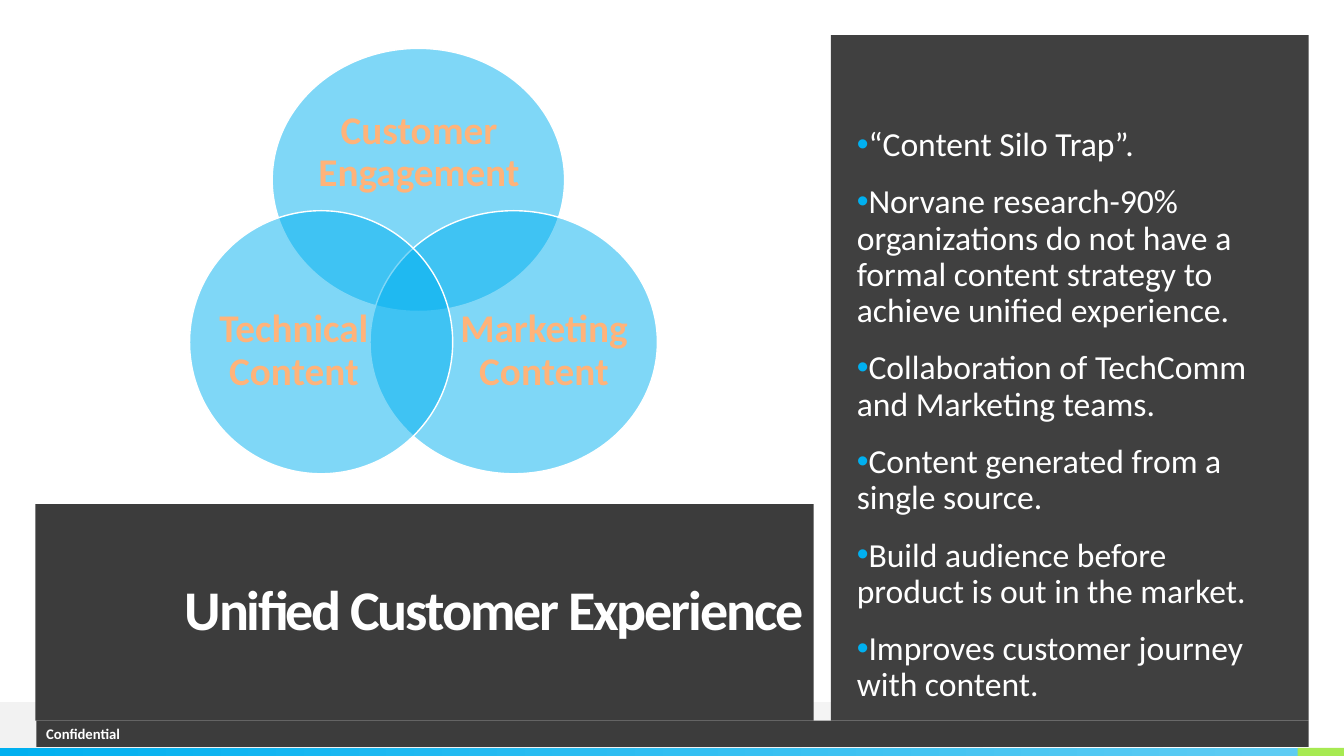
from lxml import etree
from pptx import Presentation
from pptx.dml.color import RGBColor
from pptx.enum.shapes import MSO_SHAPE
from pptx.enum.text import MSO_ANCHOR, PP_ALIGN
from pptx.oxml.ns import qn
from pptx.util import Inches, Pt

RECTANGLE, OVAL = MSO_SHAPE.RECTANGLE, MSO_SHAPE.OVAL
MIDDLE = MSO_ANCHOR.MIDDLE
LEFT, CENTER, RIGHT = PP_ALIGN.LEFT, PP_ALIGN.CENTER, PP_ALIGN.RIGHT

COLORS = {
    "white": "FFFFFF",
    "mist": "F2F2F2",
    "blue": "00B0F0",
    "sky": "5ECCF3",
    "green": "A7EA52",
    "charcoal": "3C3C3C",
    "panel": "404040",
    "peach": "FFB37A",
}

# Label, circle bounds, label bounds
CIRCLES = [
    ("Customer Engagement", (2.7, 0.48, 2.9, 2.61), (3.09, 0.93, 2.13, 1.17)),
    ("Marketing Content", (3.67, 2.09, 2.85, 2.61), (4.54, 2.77, 1.71, 1.43)),
    ("Technical Content", (1.88, 2.09, 2.61, 2.61), (2.13, 2.77, 1.57, 1.43)),
]

POINTS = [
    "“Content Silo Trap”.",
    "Norvane research-90% organizations do not have a formal content strategy "
    "to achieve unified experience.",
    "Collaboration of TechComm and Marketing teams.",
    "Content generated from a single source.",
    "Build audience before product is out in the market.",
    "Improves customer journey with content.",
]


def color(name):
    return RGBColor.from_string(COLORS[name])


class SlideBuilder:
    font = "Calibri"

    def __init__(self, slide):
        self.shapes = slide.shapes

    def block(self, bounds, fill, kind=RECTANGLE):
        shape = self.shapes.add_shape(kind, *map(Inches, bounds))
        shape.shadow.inherit = False
        shape.line.fill.background()
        shape.fill.solid()
        shape.fill.fore_color.rgb = color(fill)
        return shape

    def gradient_block(self, bounds, stops):
        """Fill a block from left to right with two (position, color) stops."""
        shape = self.block(bounds, stops[0][1])
        shape.fill.gradient()
        shape.fill.gradient_angle = 0
        for stop, (position, name) in zip(shape.fill.gradient_stops, stops):
            stop.position = position
            stop.color.rgb = color(name)

    def venn_circle(self, bounds):
        circle = self.block(bounds, "blue", OVAL)
        circle.line.color.rgb = color("white")
        circle.line.width = Pt(1)
        blue = circle._element.spPr.find(qn("a:solidFill"))[0]
        etree.SubElement(blue, qn("a:alpha"), val="50000")

    def text_box(self, bounds, inset=None):
        box = self.shapes.add_textbox(*map(Inches, bounds))
        frame = box.text_frame
        if inset is not None:
            frame.margin_left = frame.margin_right = Inches(inset)
            frame.margin_top = frame.margin_bottom = Inches(inset)
        return box

    def add_text(self, shape, lines, size, fill="white", align=LEFT, bold=False,
                 line_spacing=0.9, before=0, after=0, tracking=None, bullet=False):
        frame = shape.text_frame
        frame.word_wrap = True
        frame.vertical_anchor = MIDDLE
        for index, line in enumerate(lines):
            para = frame.add_paragraph() if index else frame.paragraphs[0]
            para.alignment = align
            para.line_spacing = line_spacing
            para.space_before, para.space_after = Pt(before), Pt(after)
            if bullet:
                self.add_bullet(para)
            span = para.add_run()
            span.text = line
            span.font.name = self.font
            span.font.size = Pt(size)
            span.font.bold = bold
            span.font.color.rgb = color(fill)
            if tracking is not None:
                span._r.get_or_add_rPr().set("spc", str(int(tracking * 100)))

    def add_bullet(self, para):
        properties = para._p.get_or_add_pPr()
        properties.set("marL", "0")
        properties.set("indent", str(Inches(-0.25)))
        bullet_color = etree.SubElement(properties, qn("a:buClr"))
        etree.SubElement(bullet_color, qn("a:srgbClr"), val=COLORS["blue"])
        etree.SubElement(properties, qn("a:buFont"), typeface="Arial")
        etree.SubElement(properties, qn("a:buChar"), char="•")


def main():
    deck = Presentation()
    deck.slide_width, deck.slide_height = Inches(13.33), Inches(7.5)
    page = SlideBuilder(deck.slides.add_slide(deck.slide_layouts[6]))

    page.gradient_block((0, 6.96, 13.33, 0.46), [(0.53, "mist"), (1, "white")])
    page.gradient_block((0, 7.42, 12.87, 0.08), [(0, "blue"), (1, "sky")])
    page.block((12.87, 7.42, 0.46, 0.08), "green")

    title = page.block((0.35, 5, 7.72, 2.15), "charcoal")
    page.add_text(title, ["Unified Customer Experience"], 40, align=RIGHT,
                  bold=True, tracking=-1.5)
    footer = page.block((0.36, 7.15, 12.62, 0.26), "charcoal")
    page.add_text(footer, ["Confidential"], 10.5, bold=True, line_spacing=1, after=6)
    page.block((8.24, 0.35, 4.74, 6.8), "panel")

    for label, circle_bounds, label_bounds in CIRCLES:
        page.venn_circle(circle_bounds)
        page.add_text(page.text_box(label_bounds, inset=0), [label], 28, "peach",
                      CENTER, bold=True)

    points = page.text_box((8.4, 1.1, 4.36, 6.05))
    page.add_text(points, POINTS, 24, before=10, after=5, bullet=True)

    deck.save("out.pptx")


if __name__ == "__main__":
    main()
